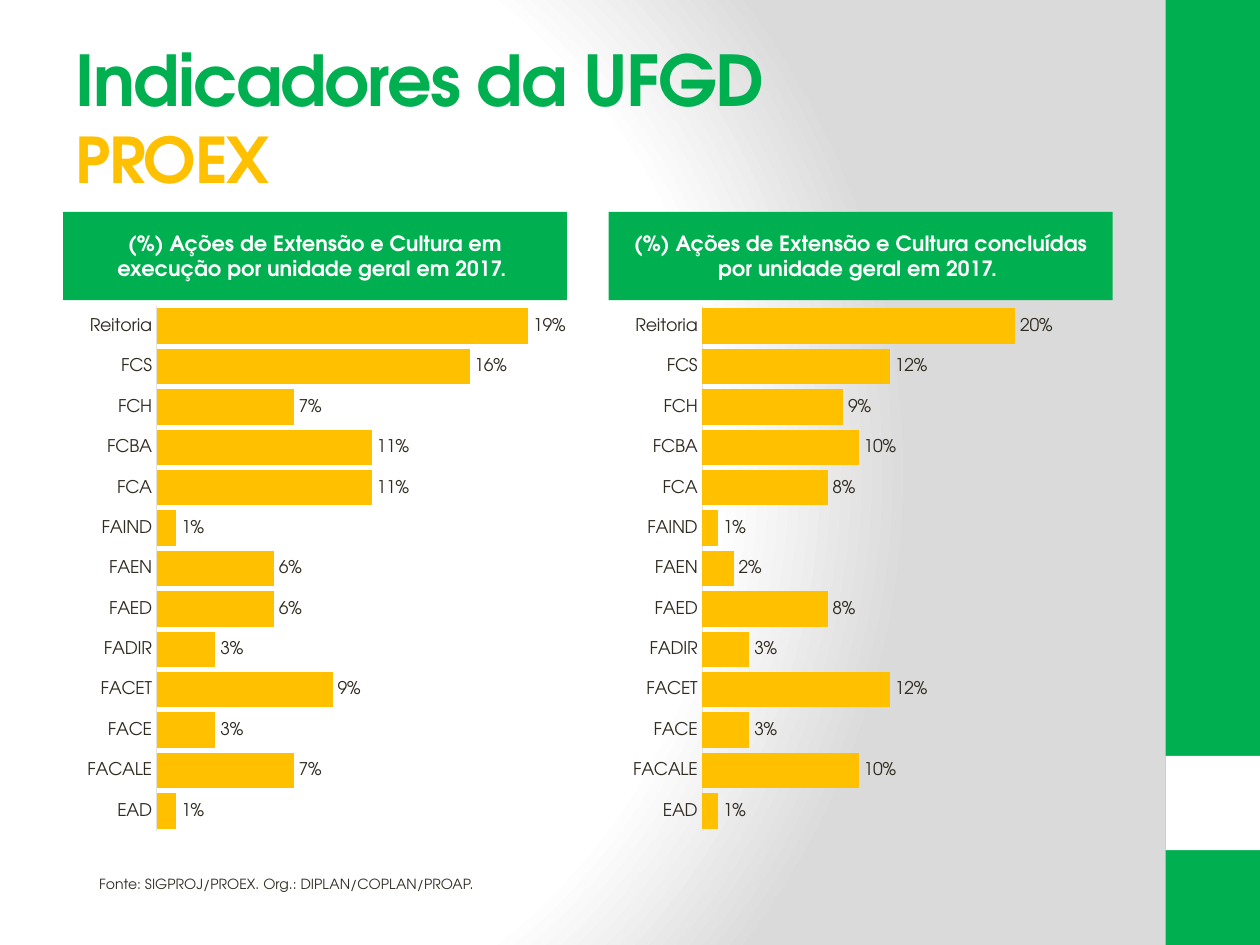
from pptx import Presentation
from pptx.chart.data import CategoryChartData as ChartData
from pptx.dml.color import RGBColor
from pptx.enum.chart import XL_CHART_TYPE as ChartKind, XL_LABEL_POSITION as LabelSpot, XL_TICK_MARK as TickMark
from pptx.enum.shapes import MSO_SHAPE as Preset
from pptx.enum.text import MSO_ANCHOR as Anchor, MSO_AUTO_SIZE as AutoSize, PP_ALIGN as Align
from pptx.oxml import parse_xml
from pptx.oxml.ns import nsdecls, qn
from pptx.util import Cm, Pt

GREEN, YELLOW, WHITE, GREY, INK, RULE = "00B050", "FFC000", "FFFFFF", "DADADA", "2F2B20", "E5E2D9"
UNITS = ["EAD", "FACALE", "FACE", "FACET", "FADIR", "FAED", "FAEN",
         "FAIND", "FCA", "FCBA", "FCH", "FCS", "Reitoria"]
PANELS = [
    ("(%) Ações de Extensão e Cultura em execução por unidade geral em 2017. ",
     [1, 7, 3, 9, 3, 6, 6, 1, 11, 11, 7, 16, 19], 0.2),
    ("(%) Ações de Extensão e Cultura concluídas por unidade geral em 2017. ",
     [1, 10, 3, 12, 3, 8, 2, 1, 8, 10, 9, 12, 20], 0.25),
]


def color(value):
    return RGBColor.from_string(value)


def assign(target, values):
    for name, value in values.items():
        setattr(target, name, value)


class SlideStyle:
    """Holds the fonts of the deck and draws each kind of element on its page."""

    face = "TeX Gyre Adventor"

    def __init__(self, page):
        self.page = page
        self.holders = {item.placeholder_format.idx: item for item in page.placeholders}

    def place(self, item, left, top, width, height):
        assign(item, {"left": Cm(left), "top": Cm(top), "width": Cm(width), "height": Cm(height)})

    def font(self, font, size, tint, bold=False):
        assign(font, {"name": self.face, "size": Pt(size), "bold": bold})
        font.color.rgb = color(tint)

    def span(self, para, text, size, tint, bold=False):
        span = para.add_run()
        span.text = text
        self.font(span.font, size, tint, bold)
        return span

    def background(self):
        self.page.background.fill.solid()
        holder = self.page.element.find(".//" + qn("p:bgPr"))
        stops = "".join(f'<a:gs pos="{spot}000"><a:srgbClr val="{tint}"/></a:gs>'
                        for spot, tint in ((0, WHITE), (75, WHITE), (100, GREY)))
        holder.replace(holder[0], parse_xml(
            f'<a:gradFill {nsdecls("a")} rotWithShape="1"><a:gsLst>{stops}</a:gsLst><a:path path="circle">'
            '<a:fillToRect l="20000" t="50000" r="100000" b="50000"/></a:path></a:gradFill>'))

    def block(self, tint, *frame):
        block = self.page.shapes.add_shape(Preset.RECTANGLE, *map(Cm, frame))
        block.fill.solid()
        block.fill.fore_color.rgb = color(tint)
        block.line.fill.background()
        block.shadow.inherit = False

    def title(self, lines, *frame):
        box = self.page.shapes.title
        self.place(box, *frame)
        assign(box.text_frame, {"vertical_anchor": Anchor.MIDDLE, "auto_size": AutoSize.NONE})
        para = box.text_frame.paragraphs[0]
        para.alignment = Align.LEFT
        for number, (text, size, tint) in enumerate(lines):
            if number:
                para.add_line_break()
            span = self.span(para, text, size, tint, True)
            span.font._element.set("spc", "-100")

    def header(self, index, text, *frame):
        box = self.holders[index]
        self.place(box, *frame)
        box.fill.solid()
        box.fill.fore_color.rgb = color(GREEN)
        assign(box.text_frame, {"vertical_anchor": Anchor.MIDDLE, "auto_size": AutoSize.NONE})
        para = box.text_frame.paragraphs[0]
        para.alignment = Align.CENTER
        self.span(para, text, 12, WHITE, True)

    def note(self, text, *frame):
        box = self.page.shapes.add_textbox(*map(Cm, frame))
        assign(box.text_frame, {"word_wrap": True, "auto_size": AutoSize.SHAPE_TO_FIT_TEXT})
        self.span(box.text_frame.paragraphs[0], text, 8, INK)

    def bars(self, percents, top_value, *frame):
        data = ChartData(number_format="0%")
        data.categories = UNITS
        data.add_series("Series 1", [percent / 100 for percent in percents])
        chart = self.page.shapes.add_chart(ChartKind.BAR_CLUSTERED, *map(Cm, frame), data).chart
        assign(chart, {"has_legend": False, "has_title": False})
        assign(chart.font, {"name": "Calibri", "size": Pt(10)})
        chart.font.color.rgb = color(INK)
        units, scale, plot = chart.category_axis, chart.value_axis, chart.plots[0]
        assign(units, {"major_tick_mark": TickMark.NONE, "minor_tick_mark": TickMark.NONE})
        self.font(units.tick_labels.font, 10, INK)
        units.format.line.width = Pt(0.75)
        units.format.line.color.rgb = color(RULE)
        assign(scale, {"minimum_scale": 0, "maximum_scale": top_value,
                       "has_major_gridlines": False, "visible": False})
        assign(plot, {"gap_width": 14, "vary_by_categories": False, "has_data_labels": True})
        assign(plot.data_labels, {"show_value": True, "number_format": "0%",
                                  "number_format_is_linked": False, "position": LabelSpot.OUTSIDE_END})
        self.font(plot.data_labels.font, 10, INK)
        fill = plot.series[0].format.fill
        fill.solid()
        fill.fore_color.rgb = color(YELLOW)
        self.inner_plot(chart, {"x": 0.186, "y": 0.011, "w": 0.776, "h": 0.965})

    def inner_plot(self, chart, portions):
        area = chart.element.find(".//" + qn("c:plotArea"))
        for old in area.findall(qn("c:layout")):
            area.remove(old)
        sizes = "".join(f'<c:{side} val="{portion}"/>' for side, portion in portions.items())
        area.insert(0, parse_xml(
            f'<c:layout {nsdecls("c")}><c:manualLayout><c:layoutTarget val="inner"/>'
            f'<c:xMode val="edge"/><c:yMode val="edge"/>{sizes}</c:manualLayout></c:layout>'))

    def drop_empty(self):
        for box in list(self.page.placeholders):
            if not box.text_frame.text:
                box.element.getparent().remove(box.element)


def main():
    deck = Presentation()
    assign(deck, {"slide_width": Cm(25.4), "slide_height": Cm(19.05)})
    style = SlideStyle(deck.slides.add_slide(deck.slide_layouts.get_by_name("Comparison")))
    style.background()
    style.block(GREEN, 23.5, 0, 1.9, 19.05)
    style.block(WHITE, 23.5, 15.24, 1.9, 1.9)
    style.title([("Indicadores da UFGD", 40, GREEN), ("PROEX", 36, YELLOW)], 1.27, 0.76, 21.16, 3.18)
    for number, (heading, percents, top_value) in enumerate(PANELS):
        left = 1.27 + 11 * number
        style.header(1 + 2 * number, heading, left, 4.27, 10.16, 1.78)
        style.bars(percents, top_value, left, 6.05, 10.16, 10.97)
    style.note("Fonte: SIGPROJ/PROEX. Org.: DIPLAN/COPLAN/PROAP.", 1.75, 17.53, 8.61, 0.61)
    style.drop_empty()
    deck.save("out.pptx")


if __name__ == "__main__":
    main()
